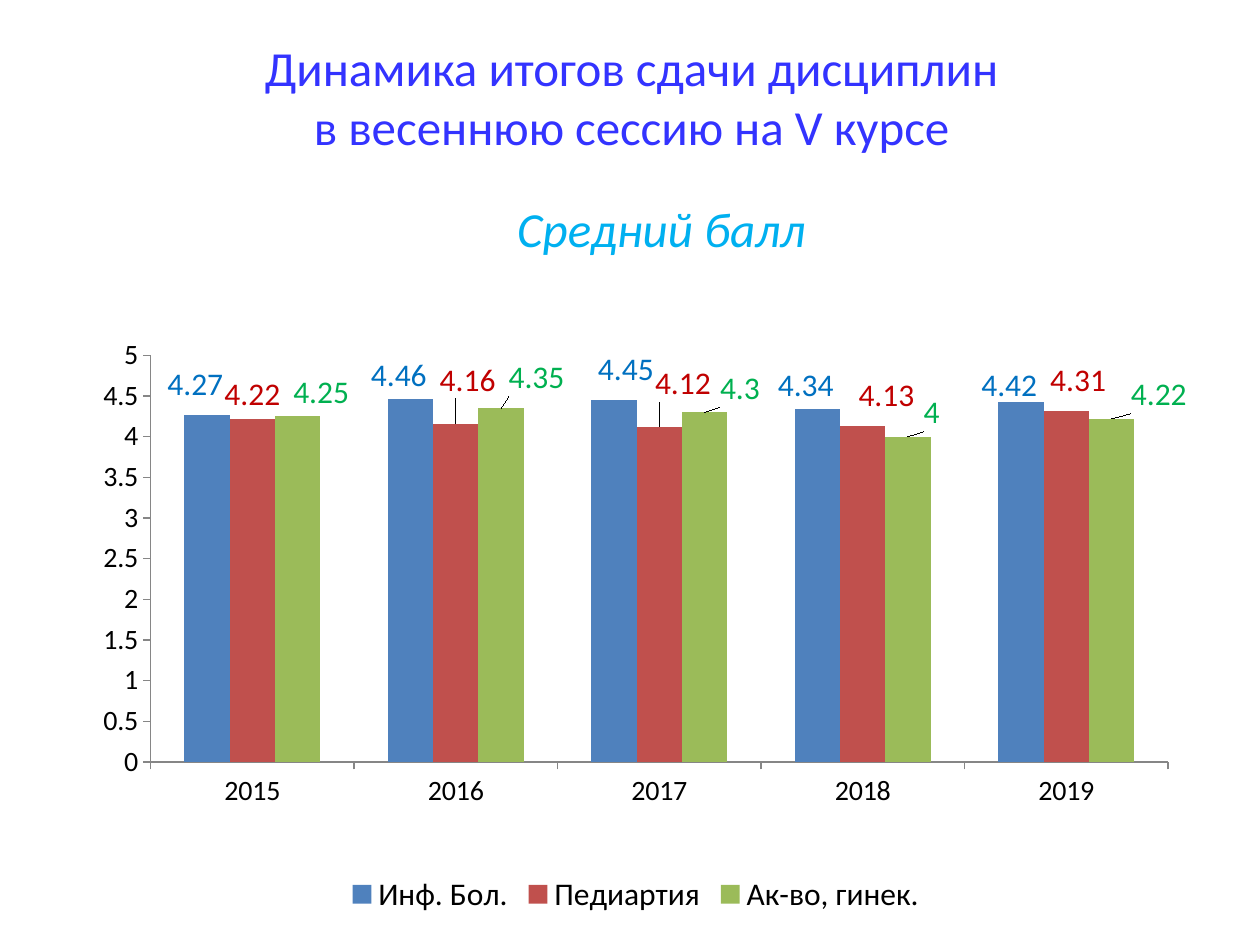
import pptx
import pptx.chart.data
import pptx.dml.color
import pptx.enum.chart
import pptx.enum.text
import pptx.oxml
import pptx.oxml.ns
import pptx.util
from pptx.util import Cm

YEARS = ["2015", "2016", "2017", "2018", "2019"]
# Name, values, bar colour, label colour, label shifts (share of chart size)
SUBJECTS = [
    ("Инф. Бол.", [4.27, 4.46, 4.45, 4.34, 4.42], "4F81BD", "0070C0",
     [(-0.01, -0.01), (-0.01, 0), (0.01, -0.01), (-0.01, 0), (-0.01, 0.01)]),
    ("Педиартия", [4.22, 4.16, 4.12, 4.13, 4.31], "C0504D", "C00000",
     [(0, 0), (0.01, -0.03), (0.02, -0.03), (0.02, -0.01), (0.01, -0.01)]),
    ("Ак-во, гинек.", [4.25, 4.35, 4.3, 4, 4.22], "9BBB59", "00B050",
     [(0.02, 0), (0.03, -0.01), (0.03, 0), (0.02, 0), (0.04, 0)]),
]


def colour(code):
    return pptx.dml.color.RGBColor.from_string(code)


def manual_layout(**parts):
    """Build a c:layout element from the given manual layout values."""
    items = "".join(f'<c:{name} val="{value}"/>' for name, value in parts.items())
    return pptx.oxml.parse_xml(
        f'<c:layout {pptx.oxml.ns.nsdecls("c")}>'
        f"<c:manualLayout>{items}</c:manualLayout></c:layout>")


class SlideBuilder:
    font_name = "Calibri"
    axis_colour = "868686"

    def __init__(self, page):
        self.page = page

    def style(self, font, size, code, italic=False):
        font.name = self.font_name
        font.size = pptx.util.Pt(size)
        font.italic = italic
        font.color.rgb = colour(code)

    def add_lines(self, box, lines, size, code, italic=False):
        frame = box.text_frame
        frame.word_wrap = True
        frame.auto_size = pptx.enum.text.MSO_AUTO_SIZE.NONE
        frame.vertical_anchor = pptx.enum.text.MSO_ANCHOR.MIDDLE
        for index, line in enumerate(lines):
            para = frame.add_paragraph() if index else frame.paragraphs[0]
            para.alignment = pptx.enum.text.PP_ALIGN.CENTER
            span = para.add_run()
            span.text = line
            self.style(span.font, size, code, italic)

    def title(self, lines, left, top, width, height):
        box = self.page.shapes.title
        box.left, box.top, box.width, box.height = left, top, width, height
        self.add_lines(box, lines, 28, "3333FF")

    def caption(self, text, left, top, width, height):
        box = self.page.shapes.add_textbox(left, top, width, height)
        self.add_lines(box, [text], 28, "00B0F0", italic=True)

    def column_chart(self, left, top, width, height):
        data = pptx.chart.data.CategoryChartData()
        data.categories = YEARS
        for name, values, *_ in SUBJECTS:
            data.add_series(name, values)
        chart = self.page.shapes.add_chart(
            pptx.enum.chart.XL_CHART_TYPE.COLUMN_CLUSTERED,
            left, top, width, height, data).chart
        self.style(chart.font, 18, "000000")
        chart.has_title = False
        chart.has_legend = True
        chart.legend.position = pptx.enum.chart.XL_LEGEND_POSITION.BOTTOM
        chart.legend.include_in_layout = False
        self.style(chart.legend.font, 18, "000000")

        # Axes
        for axis in (chart.category_axis, chart.value_axis):
            axis.has_major_gridlines = False
            axis.major_tick_mark = pptx.enum.chart.XL_TICK_MARK.OUTSIDE
            axis.format.line.color.rgb = colour(self.axis_colour)
            self.style(axis.tick_labels.font, 16, "000000")
        chart.value_axis.minimum_scale = 0
        chart.value_axis.maximum_scale = 5
        chart.value_axis.major_unit = 0.5

        # Plot area
        plot = chart.plots[0]
        plot.gap_width = 150
        plot.overlap = 0
        plot.vary_by_categories = False
        area = chart.value_axis._element.getparent()
        for old in area.findall(pptx.oxml.ns.qn("c:layout")):
            area.remove(old)
        area.insert(0, manual_layout(
            layoutTarget="inner", xMode="edge", yMode="edge",
            x=0.09, y=0.14, w=0.86, h=0.62))

        # Series colours and labels
        for series, (_, _, fill, ink, shifts) in zip(plot.series, SUBJECTS):
            series.format.fill.solid()
            series.format.fill.fore_color.rgb = colour(fill)
            self.value_labels(series, ink, shifts)

    def value_labels(self, series, ink, shifts):
        outside = pptx.enum.chart.XL_LABEL_POSITION.OUTSIDE_END
        labels = series.data_labels
        labels.show_value = True
        labels.position = outside
        self.style(labels.font, 18, ink)
        for index in range(len(shifts)):
            label = series.points[index].data_label
            self.style(label.font, 18, ink)
            label.position = outside
        for element, (x, y) in zip(series._element.xpath("c:dLbls/c:dLbl"), shifts):
            element.insert(1, manual_layout(x=x, y=y))


def main():
    deck = pptx.Presentation()
    deck.slide_width, deck.slide_height = Cm(25.4), Cm(19.05)
    builder = SlideBuilder(deck.slides.add_slide(deck.slide_layouts[5]))
    builder.column_chart(Cm(0.89), Cm(5.31), Cm(23.85), Cm(13.23))
    builder.caption("Средний балл", Cm(1.9), Cm(3.89), Cm(22.86), Cm(1.42))
    builder.title(["Динамика итогов сдачи дисциплин", "в весеннюю сессию на V курсе"],
                  Cm(1.3), Cm(0.53), Cm(22.86), Cm(2.84))
    deck.save("out.pptx")


if __name__ == "__main__":
    main()
